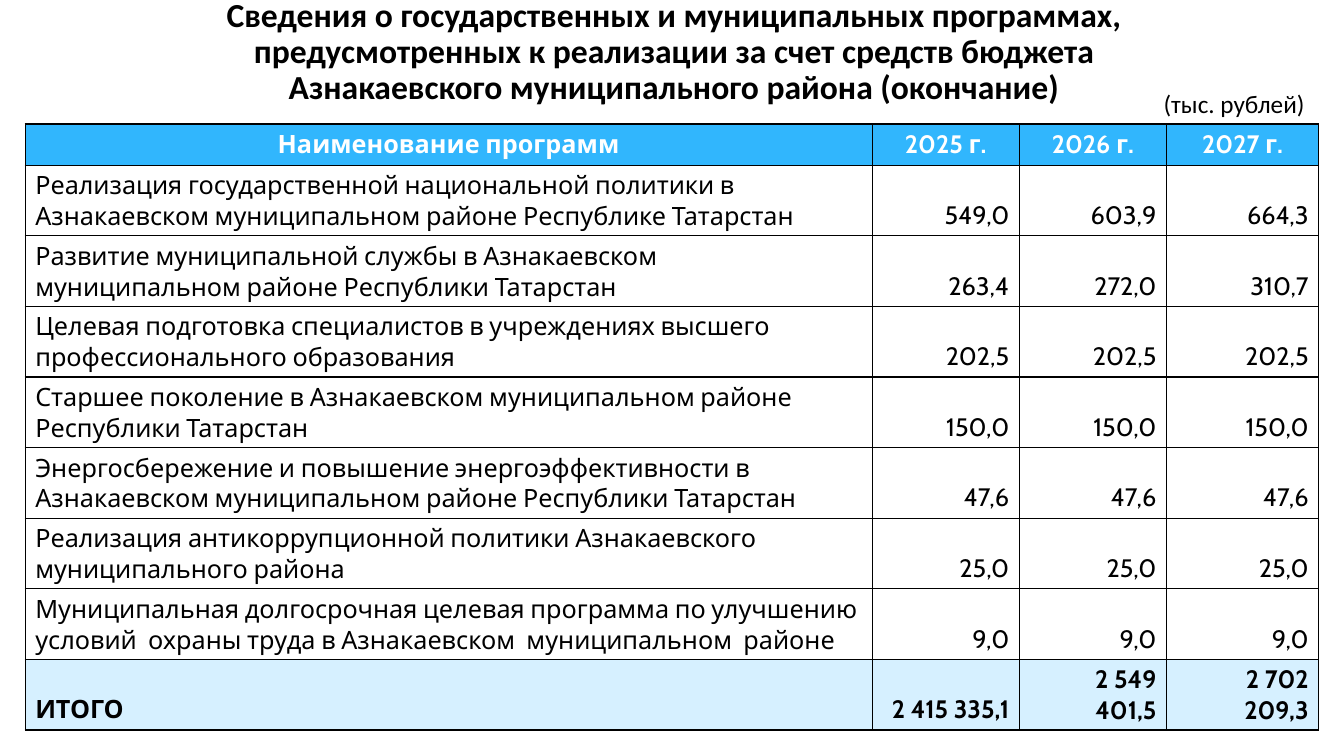
from dataclasses import dataclass

from pptx import Presentation
from pptx import util as u
from pptx.dml.color import RGBColor
from pptx.enum import text
from pptx.oxml import parse_xml
from pptx.oxml.ns import nsdecls


@dataclass(frozen=True)
class Theme:
    heading_font: str = "Calibri"
    table_font: str = "Cabin"
    title_size: int = 24
    body_size: int = 18
    black: str = "000000"
    white: str = "FFFFFF"
    header_fill: str = "31B6FD"
    total_fill: str = "D6F0FF"
    border_width: int = 1


class SlideBuilder:
    def __init__(self, page, theme):
        self.page = page
        self.theme = theme

    def place(self, box, left, top, width, height):
        box.left, box.top = u.Inches(left), u.Inches(top)
        box.width, box.height = u.Inches(width), u.Inches(height)

    def set_text(self, frame, words, align, font, size, color, bold=False):
        frame.text = words
        para = frame.paragraphs[0]
        para.alignment = align
        for span in para.runs:
            span.font.name = font
            span.font.size = u.Pt(size)
            span.font.bold = bold
            span.font.color.rgb = RGBColor.from_string(color)
        return para

    def title(self, words, *area):
        box = self.page.shapes.title
        self.place(box, *area)
        frame = box.text_frame
        frame.word_wrap = True
        frame.auto_size = text.MSO_AUTO_SIZE.NONE
        frame.vertical_anchor = text.MSO_ANCHOR.TOP
        para = self.set_text(frame, words, text.PP_ALIGN.CENTER, self.theme.heading_font,
                             self.theme.title_size, self.theme.black, True)
        para.line_spacing = 0.9

    def label(self, words, *area):
        box = self.page.shapes.add_textbox(*map(u.Inches, area))
        box.text_frame.word_wrap = False
        self.set_text(box.text_frame, words, text.PP_ALIGN.CENTER, self.theme.heading_font,
                      self.theme.body_size, self.theme.black)

    def borders(self, cell):
        properties = cell._tc.get_or_add_tcPr()
        for position, side in enumerate(("lnL", "lnR", "lnT", "lnB")):
            properties.insert(position, parse_xml(
                f'<a:{side} {nsdecls("a")} w="{u.Pt(self.theme.border_width)}">'
                f'<a:solidFill><a:srgbClr val="{self.theme.black}"/></a:solidFill></a:{side}>'))

    def cell(self, cell, words, align, fill, color, bold, anchor):
        cell.fill.solid()
        cell.fill.fore_color.rgb = RGBColor.from_string(fill)
        cell.vertical_anchor = anchor
        self.set_text(cell.text_frame, words, align, self.theme.table_font,
                      self.theme.body_size, color, bold)
        self.borders(cell)

    def table(self, rows, widths, heights, left, top):
        theme = self.theme
        table = self.page.shapes.add_table(
            len(rows), len(widths), u.Inches(left), u.Inches(top),
            u.Inches(sum(widths)), u.Inches(sum(heights))).table
        for column, width in zip(table.columns, widths):
            column.width = u.Inches(width)
        for row, height in zip(table.rows, heights):
            row.height = u.Inches(height)
        last = len(rows) - 1
        for row_index, values in enumerate(rows):
            header = row_index == 0
            fill = {0: theme.header_fill, last: theme.total_fill}.get(row_index, theme.white)
            color = theme.white if header else theme.black
            anchor = text.MSO_ANCHOR.TOP if header else text.MSO_ANCHOR.BOTTOM
            for column_index, words in enumerate(values):
                if header:
                    align = text.PP_ALIGN.CENTER
                else:
                    align = text.PP_ALIGN.RIGHT if column_index else text.PP_ALIGN.LEFT
                self.cell(table.cell(row_index, column_index), words, align, fill,
                          color, row_index in (0, last), anchor)


PROGRAMS = [
    ("Наименование программ", "2025 г.", "2026 г.", "2027 г."),
    ("Реализация государственной национальной политики в Азнакаевском муниципальном районе "
     "Республике Татарстан", "549,0", "603,9", "664,3"),
    ("Развитие муниципальной службы в Азнакаевском муниципальном районе Республики Татарстан",
     "263,4", "272,0", "310,7"),
    ("Целевая подготовка специалистов в учреждениях высшего профессионального образования",
     "202,5", "202,5", "202,5"),
    ("Старшее поколение в Азнакаевском муниципальном районе Республики Татарстан",
     "150,0", "150,0", "150,0"),
    ("Энергосбережение и повышение энергоэффективности в Азнакаевском муниципальном районе "
     "Республики Татарстан", "47,6", "47,6", "47,6"),
    ("Реализация антикоррупционной политики Азнакаевского муниципального района",
     "25,0", "25,0", "25,0"),
    ("Муниципальная долгосрочная целевая программа по улучшению условий  охраны труда "
     "в Азнакаевском  муниципальном  районе", "9,0", "9,0", "9,0"),
    ("ИТОГО", "2 415 335,1", "2 549 401,5", "2 702 209,3"),
]


def main():
    deck = Presentation()
    deck.slide_width, deck.slide_height = u.Inches(13.33), u.Inches(7.5)
    page = deck.slides.add_slide(deck.slide_layouts[5])
    builder = SlideBuilder(page, Theme())
    builder.label("(тыс. рублей)", 11.43, 0.83, 1.62, 0.4)
    builder.title("Сведения о государственных и муниципальных программах, предусмотренных "
                  "к реализации за счет средств бюджета Азнакаевского муниципального района "
                  "(окончание)", 1.51, -0.07, 10.35, 1.19)
    heights = [0.41] + [0.7] * (len(PROGRAMS) - 2) + [0.48]
    builder.table(PROGRAMS, [8.4, 1.46, 1.46, 1.51], heights, 0.25, 1.23)
    deck.save("out.pptx")


if __name__ == "__main__":
    main()
